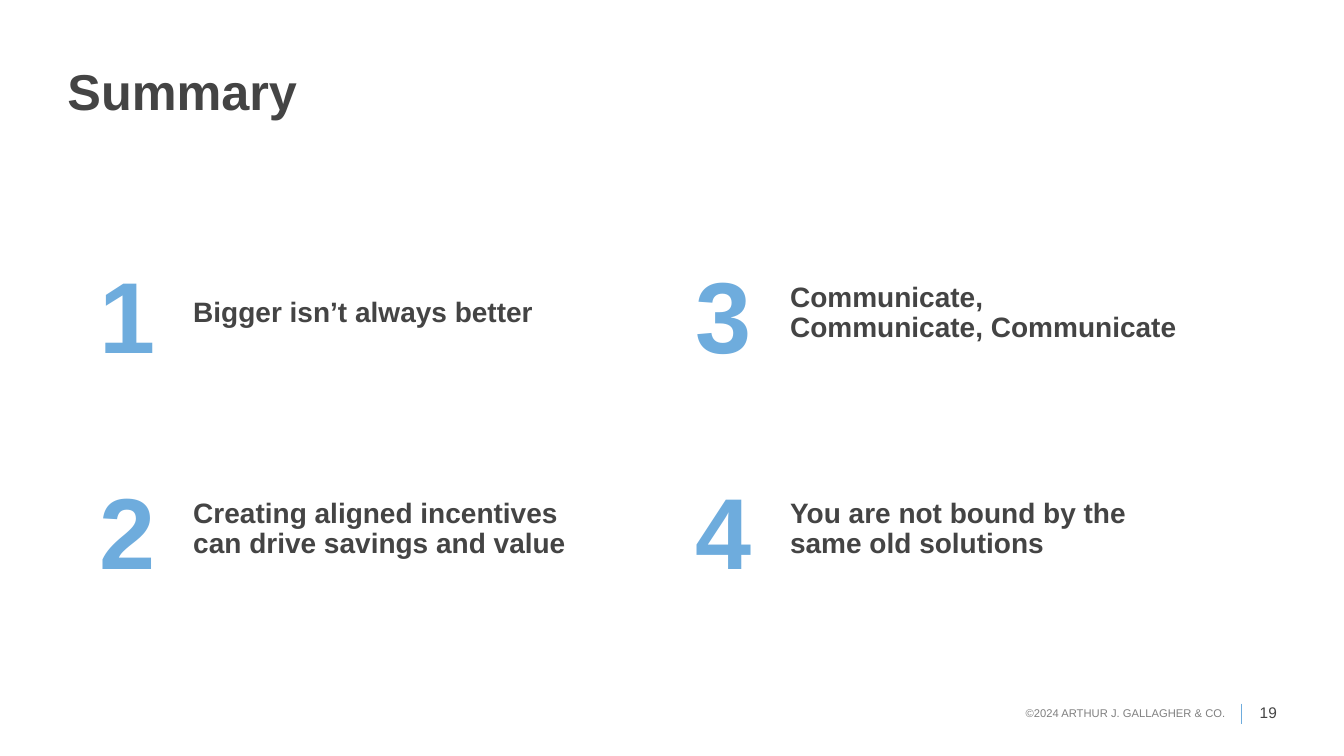
from dataclasses import dataclass

from lxml.etree import SubElement
from pptx import Presentation
from pptx.dml.color import RGBColor
from pptx.enum.shapes import MSO_CONNECTOR as Wire, MSO_SHAPE as Shape
from pptx.enum.text import MSO_ANCHOR as Anchor, MSO_AUTO_SIZE as Fit, PP_ALIGN as Align
from pptx.oxml.ns import qn
from pptx.slide import Slide
from pptx.text.text import TextFrame
from pptx.util import Cm, Pt

BLUE = RGBColor(0x6E, 0xAC, 0xDD)
DARK = RGBColor(0x44, 0x44, 0x44)
GRAY = RGBColor(0x80, 0x80, 0x80)
WHITE = RGBColor(0xFF, 0xFF, 0xFF)


@dataclass
class Style:
    size: float
    color: RGBColor
    bold: bool = True
    align: Align = Align.LEFT
    anchor: Anchor = Anchor.MIDDLE
    pads: tuple[float, float, float, float] = (0, 0, 0, 0)
    lead: float = 1.0
    after: float = 0
    wrap: bool = True


@dataclass
class Note:
    text: str
    left: float
    top: float
    width: float
    height: float
    style: Style


TITLE = Style(36, DARK, anchor=Anchor.TOP, lead=0.9)
DIGIT = Style(72, BLUE, pads=(0.6, 0.4, 0.2, 0.4))
POINT = Style(20, DARK, pads=(0.2, 0.4, 0.2, 0.4), lead=0.9, after=6)
LEGAL = Style(8, GRAY, bold=False, align=Align.RIGHT, after=6, wrap=False)
PAGE = Style(11, DARK, bold=False, align=Align.RIGHT, anchor=Anchor.TOP, after=6, wrap=False)

POINTS = [
    "Bigger isn’t always better",
    "Creating aligned incentives can drive savings and value",
    "Communicate, Communicate, Communicate",
    "You are not bound by the same old solutions",
]
NOTES = [
    Note("©2024 ARTHUR J. GALLAGHER & CO.", 25.78, 17.81, 5.11, 0.33, LEGAL),
    Note("19", 31.7, 17.73, 0.48, 0.48, PAGE),
]


def place(item, left: float, top: float, width: float, height: float) -> None:
    item.left, item.top = Cm(left), Cm(top)
    item.width, item.height = Cm(width), Cm(height)


def write(frame: TextFrame, text: str, style: Style) -> None:
    frame.text = text
    frame.auto_size = Fit.NONE
    frame.word_wrap = style.wrap
    frame.vertical_anchor = style.anchor
    (frame.margin_left, frame.margin_top,
     frame.margin_right, frame.margin_bottom) = map(Cm, style.pads)
    para = frame.paragraphs[0]
    props = para._p.get_or_add_pPr()
    props.set("marL", "0")
    props.set("indent", "0")
    SubElement(props, qn("a:buNone"))
    para.alignment = style.align
    para.line_spacing = style.lead
    para.space_before = Pt(0)
    para.space_after = Pt(style.after)
    font = para.font
    font.name, font.size, font.bold = "Arial", Pt(style.size), style.bold
    font.color.rgb = style.color


def add_card(slide: Slide, index: int, text: str) -> None:
    col, row = divmod(index, 2)
    left, top = 1.9 + 15.04 * col, 5.64 + 5.44 * row
    card = slide.shapes.add_shape(Shape.RECTANGLE, Cm(left), Cm(top), Cm(13.92), Cm(4.5))
    card.shadow.inherit = False
    card.fill.solid()
    card.fill.fore_color.rgb = WHITE
    card.line.fill.background()
    write(card.text_frame, str(index + 1), DIGIT)
    body = slide.placeholders[index + 1]
    place(body, left + 2.77, top + 0.2, 10.16, 4.11)
    write(body.text_frame, text, POINT)
    card._element.addnext(body._element)


def add_note(slide: Slide, note: Note) -> None:
    box = slide.shapes.add_textbox(Cm(note.left), Cm(note.top), Cm(note.width), Cm(note.height))
    write(box.text_frame, note.text, note.style)


def add_rule(slide: Slide) -> None:
    rule = slide.shapes.add_connector(Wire.STRAIGHT, Cm(31.29), Cm(17.73), Cm(31.29), Cm(18.24))
    rule.line.color.rgb = BLUE
    rule.line.width = Pt(0.5)
    SubElement(rule._element.spPr, qn("a:effectLst"))


def main() -> None:
    deck = Presentation()
    deck.slide_width, deck.slide_height = Cm(33.87), Cm(19.05)
    slide = deck.slides.add_slide(deck.slide_layouts.get_by_name("Comparison"))
    add_rule(slide)
    title = slide.shapes.title
    place(title, 1.7, 1.7, 20.09, 2.01)
    write(title.text_frame, "Summary", TITLE)
    for index, text in enumerate(POINTS):
        add_card(slide, index, text)
    for note in NOTES:
        add_note(slide, note)
    deck.save("out.pptx")


if __name__ == "__main__":
    main()
